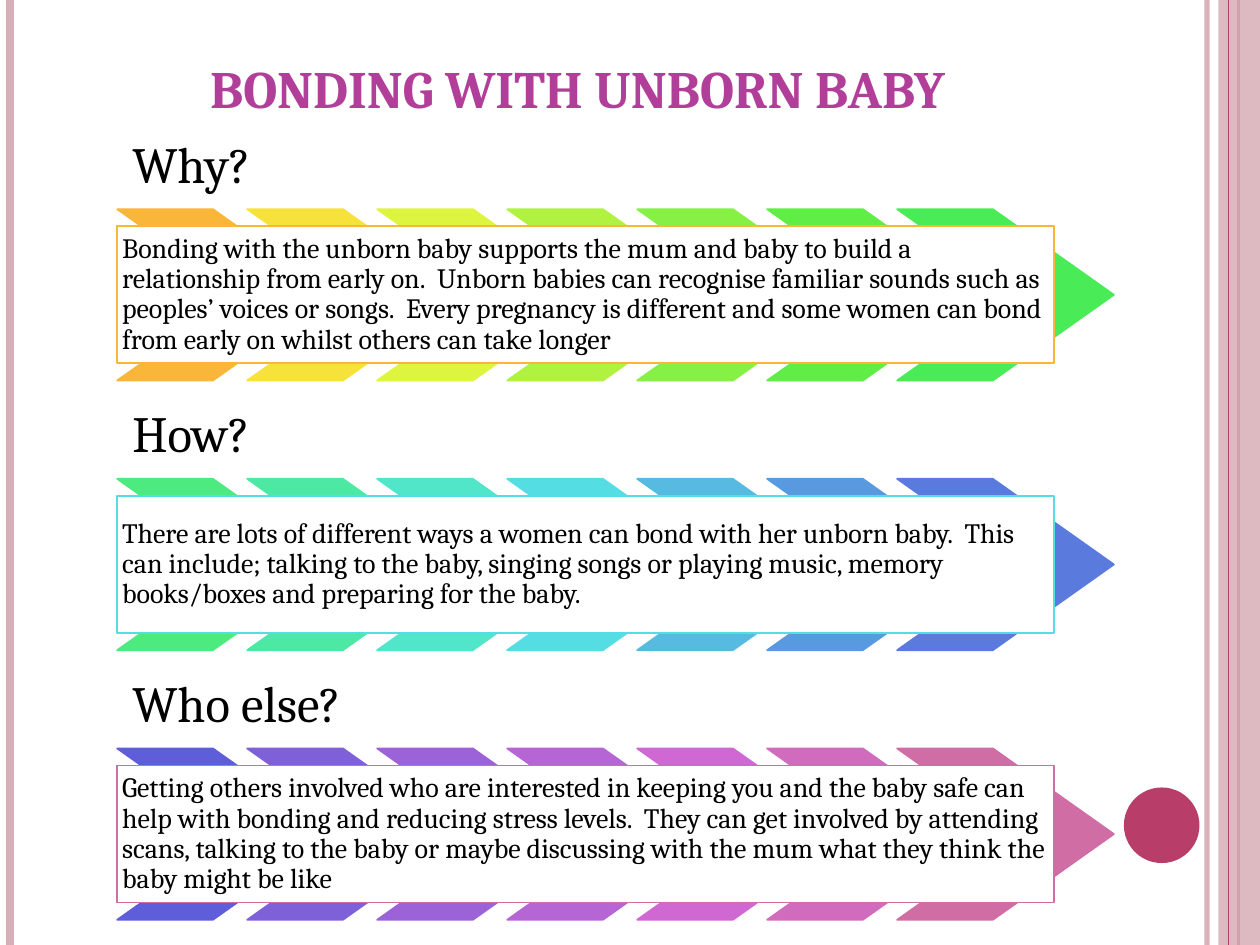
import pptx
import pptx.util
from pptx.dml.color import RGBColor
from pptx.enum.shapes import MSO_CONNECTOR, MSO_SHAPE
from pptx.enum.text import MSO_ANCHOR, PP_ALIGN
from pptx.oxml.ns import qn
from lxml import etree

Inches = pptx.util.Inches
Pt = pptx.util.Pt

WIDTH, HEIGHT = 10, 7.5
FONT = "Cambria"
WHITE = RGBColor(0xFF, 0xFF, 0xFF)
BLACK = RGBColor(0, 0, 0)
ROSE = RGBColor(0xD8, 0xAF, 0xB9)
CRIMSON = RGBColor(0xB8, 0x3D, 0x68)
MAGENTA = RGBColor(0xB1, 0x3F, 0x9A)


def colors(codes):
    return [RGBColor.from_string(code) for code in codes.split()]


# Each section: heading, body, chevron colours, index of the panel's outline colour
SECTIONS = [
    ("Why?",
     "Bonding with the unborn baby supports the mum and baby to build a relationship "
     "from early on.  Unborn babies can recognise familiar sounds such as peoples’ "
     "voices or songs.  Every pregnancy is different and some women can bond from "
     "early on whilst others can take longer",
     colors("F9B639 F7E23C DDF53E B1F241 87F044 60EE46 49EC57"), 0),
    ("How?",
     "There are lots of different ways a women can bond with her unborn baby.  This "
     "can include; talking to the baby, singing songs or playing music, memory "
     "books/boxes and preparing for the baby.",
     colors("4CEA7F 4EE8A5 51E6C9 54DDE3 56BAE1 5999DF 5B7ADD"), 3),
    ("Who else?",
     "Getting others involved who are interested in keeping you and the baby safe can "
     "help with bonding and reducing stress levels.  They can get involved by attending "
     "scans, talking to the baby or maybe discussing with the mum what they think the "
     "baby might be like",
     colors("5E5EDB 7E60D9 9B63D7 B665D5 CF68D3 D16BBD CF6DA4"), 6),
]


def set_alpha(fill_parent, percent):
    color = fill_parent.find(qn("a:solidFill"))[0]
    etree.SubElement(color, qn("a:alpha")).set("val", str(percent * 1000))


def add_shape(page, kind, box, fill, outline=None):
    shape = page.shapes.add_shape(kind, *map(Inches, box))
    shape.shadow.inherit = False
    shape.fill.solid()
    shape.fill.fore_color.rgb = fill
    if outline is None:
        shape.line.fill.background()
    else:
        shape.line.color.rgb = outline
        shape.line.width = Pt(1)
    return shape


def add_rule(page, x, color, width, alpha=None):
    rule = page.shapes.add_connector(
        MSO_CONNECTOR.STRAIGHT, Inches(x), 0, Inches(x), Inches(HEIGHT))
    rule.line.color.rgb = color
    rule.line.width = Pt(width)
    properties = rule._element.spPr
    etree.SubElement(properties, qn("a:effectLst"))
    if alpha:
        set_alpha(properties.find(qn("a:ln")), alpha)


def write_text(shape, text, size, color, anchor, inset, align=PP_ALIGN.LEFT):
    frame = shape.text_frame
    frame.word_wrap = True
    frame.vertical_anchor = anchor
    frame.margin_left = frame.margin_right = Inches(inset)
    frame.margin_top = frame.margin_bottom = Inches(inset)
    frame.text = text
    para = frame.paragraphs[0]
    para.alignment = align
    para.line_spacing = 0.9
    font = para.runs[0].font
    font.name, font.size, font.color.rgb = FONT, Pt(size), color
    return font


def add_side_decoration(page):
    add_rule(page, 9.58, ROSE, 3, alpha=93)
    add_rule(page, 0.08, ROSE, 4.5)
    add_rule(page, 9.83, CRIMSON, 1.5)
    strip = add_shape(page, MSO_SHAPE.RECTANGLE, (9.67, 0, WIDTH - 9.67, HEIGHT), ROSE)
    set_alpha(strip._element.spPr, 87)
    add_rule(page, 9.75, CRIMSON, 0.75)
    add_shape(page, MSO_SHAPE.OVAL, (8.92, 6.25, 0.6, 0.6), CRIMSON)


def add_title(page, box):
    title = page.shapes.add_textbox(*map(Inches, box))
    font = write_text(title, "BONDING WITH UNBORN BABY", 30, MAGENTA,
                      MSO_ANCHOR.BOTTOM, 0.05, PP_ALIGN.CENTER)
    font.bold = True
    title.text_frame.paragraphs[0].line_spacing = 1.0


def add_section(page, box, heading, body, palette, outline_index):
    left, top, width, height = box
    heading_height = height * 0.33
    band_top, band_height = top + heading_height, height - heading_height

    # Heading above the band
    label = page.shapes.add_textbox(
        *map(Inches, (left, top, width * 0.93, heading_height)))
    write_text(label, heading, 29, BLACK, MSO_ANCHOR.BOTTOM, 0.12)

    # Row of overlapping chevrons spanning the box
    chevron_width = 1.72
    step = (width - chevron_width) / (len(palette) - 1)
    for column, color in enumerate(palette):
        chevron = add_shape(
            page, MSO_SHAPE.CHEVRON,
            (left + column * step, band_top, chevron_width, band_height), color, color)
        chevron.adjustments[0] = 0.706

    # Text panel centred on the band's height
    panel = add_shape(
        page, MSO_SHAPE.RECTANGLE,
        (left, band_top + band_height * 0.1, width * 0.94, band_height * 0.8),
        WHITE, palette[outline_index])
    write_text(panel, body, 16, BLACK, MSO_ANCHOR.MIDDLE, 0.04)


def main():
    deck = pptx.Presentation()
    deck.slide_width, deck.slide_height = Inches(WIDTH), Inches(HEIGHT)
    page = deck.slides.add_slide(deck.slide_layouts[6])

    add_side_decoration(page)
    add_title(page, (0.5, 0.3, 8.17, 0.69))
    for row, section in enumerate(SECTIONS):
        add_section(page, (0.93, 0.99 + row * 2.14, 7.91, 2.03), *section)

    deck.save("out.pptx")


if __name__ == "__main__":
    main()
